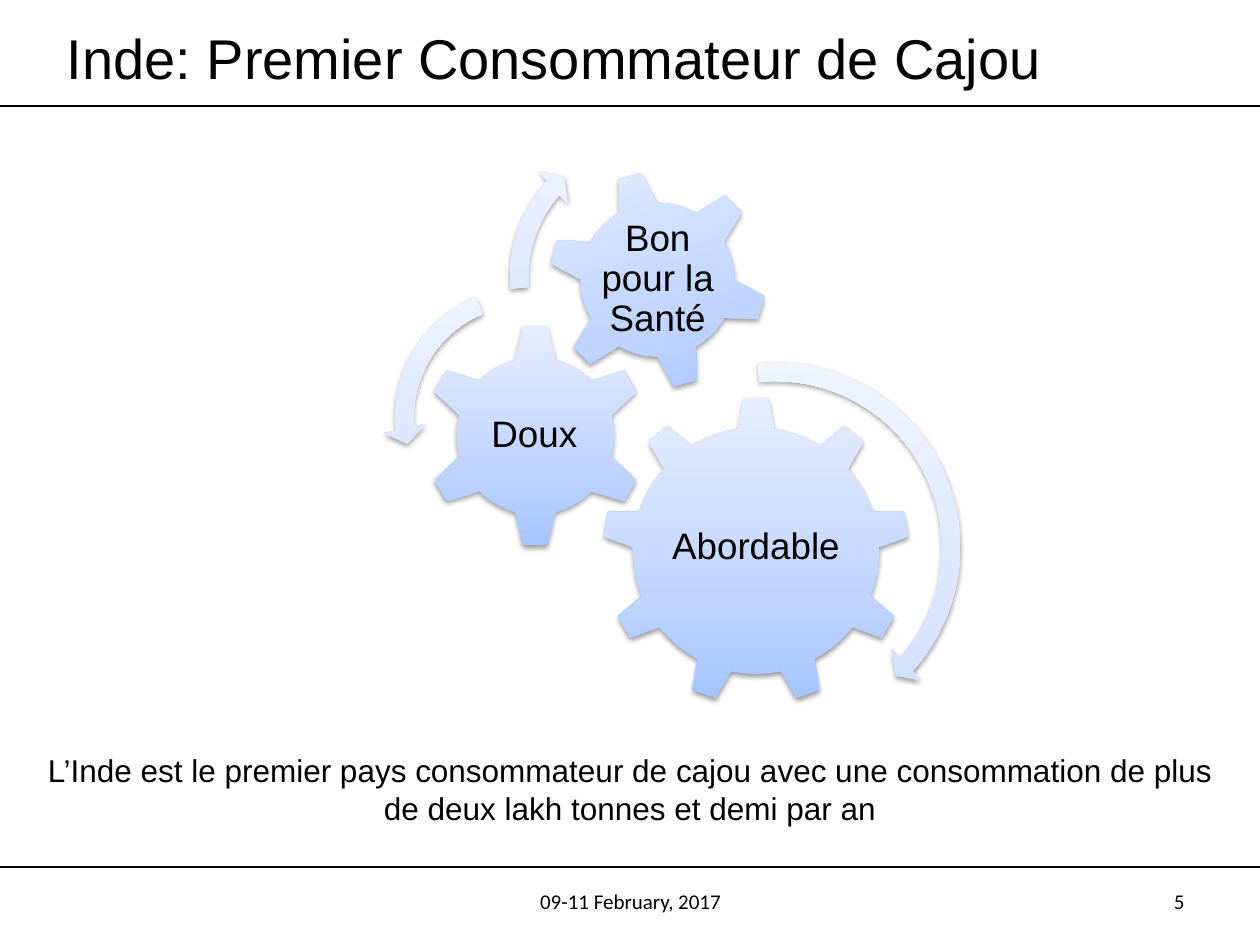
from copy import deepcopy
from dataclasses import dataclass

from lxml import etree
from pptx import Presentation
from pptx.dml.color import RGBColor
from pptx.enum.shapes import MSO_CONNECTOR, MSO_SHAPE
from pptx.enum.text import MSO_ANCHOR, PP_ALIGN
from pptx.oxml.ns import qn
from pptx.util import Inches, Pt

LINE = MSO_CONNECTOR.STRAIGHT
GEAR_SIX, GEAR_NINE = MSO_SHAPE.GEAR_6, MSO_SHAPE.GEAR_9
ARC, LEFT_ARC = MSO_SHAPE.CIRCULAR_ARROW, MSO_SHAPE.LEFT_CIRCULAR_ARROW
MIDDLE, TOP = MSO_ANCHOR.MIDDLE, MSO_ANCHOR.TOP
LEFT, CENTER, RIGHT = PP_ALIGN.LEFT, PP_ALIGN.CENTER, PP_ALIGN.RIGHT
WIDE, HIGH = Inches(10), Inches(7.5)
COLS, ROWS = 100, 75


@dataclass(frozen=True)
class Theme:
    ink: str = "000000"
    gear: tuple = ("A4C4FF", "BFD4FF", "E6EEFF")
    arc: tuple = ("CDDDFE", "DBE6FE", "F0F5FF")
    stops: tuple = (0, 0.35, 1)
    head: str = "Arial"
    foot: str = "Calibri"
    title: int = 32
    label: int = 21
    body: int = 18
    small: int = 12


THEME = Theme()


def place(box):
    x, y, w, h = box
    return [round(v) for v in (x * WIDE / COLS, y * HIGH / ROWS,
                               w * WIDE / COLS, h * HIGH / ROWS)]


def style(frame, size, font, align, anchor=MIDDLE):
    frame.vertical_anchor = anchor
    for para in frame.paragraphs:
        para.alignment = align
        for run in para.runs:
            run.font.size = Pt(size)
            run.font.name = font
            run.font.color.rgb = RGBColor.from_string(THEME.ink)


def write(shapes, box, text, size, font, align, anchor=MIDDLE, wrap=True):
    frame = shapes.add_textbox(*place(box)).text_frame
    frame.word_wrap = wrap
    frame.text = text
    style(frame, size, font, align, anchor)
    return frame


def shade(shape, tones):
    fill = shape.fill
    fill.gradient()
    fill.gradient_angle = 90
    stops = shape._element.spPr.find(qn("a:gradFill")).find(qn("a:gsLst"))
    stops.append(deepcopy(stops[-1]))
    for stop, tone, spot in zip(fill.gradient_stops, tones, THEME.stops):
        stop.color.rgb = RGBColor.from_string(tone)
        stop.position = spot
    shape.line.fill.background()
    shape.shadow.inherit = False
    effects = shape._element.spPr.find(qn("a:effectLst"))
    cast = etree.SubElement(effects, qn("a:outerShdw"), blurRad="40000",
                            dist="20000", dir="5400000", rotWithShape="0")
    color = etree.SubElement(cast, qn("a:srgbClr"), val=THEME.ink)
    etree.SubElement(color, qn("a:alpha"), val="38000")


def rule(shapes, row):
    x, y, w, _ = place((0, row, COLS, 0))
    line = shapes.add_connector(LINE, x, y, x + w, y)
    line.line.color.rgb = RGBColor.from_string(THEME.ink)
    line.line.width = Pt(1)
    etree.SubElement(line._element.spPr, qn("a:effectLst"))


def header(slide, box):
    title = slide.shapes.title
    title.left, title.top, title.width, title.height = place(box)
    title.text_frame.text = "Inde: Premier Consommateur de Cajou"
    style(title.text_frame, THEME.title, THEME.head, LEFT)
    rule(slide.shapes, box[1] + box[3])


def gears(slide, box):
    left, top = box[:2]
    shapes = slide.shapes.add_group_shape().shapes
    wheels = [
        (GEAR_NINE, 17.8, 22.5, 24.4, 0, "Abordable", (4.9, 5.7, 14.6, 12.6)),
        (GEAR_SIX, 3.6, 16.7, 17.8, 0, "Doux", (4.4, 4.5, 8.8, 8.8)),
        (GEAR_SIX, 13.5, 4.5, 17.4, 345, "Bon pour la Santé", (3.8, 3.8, 9.8, 9.8)),
    ]
    for kind, x, y, size, turn, text, (dx, dy, w, h) in wheels:
        x, y = left + x, top + y
        wheel = shapes.add_shape(kind, *place((x, y, size, size)))
        wheel.rotation = turn
        shade(wheel, THEME.gear)
        frame = write(shapes, (x + dx, y + dy, w, h), text,
                      THEME.label, THEME.head, CENTER)
        frame.margin_left = frame.margin_right = Inches(0.03)
        frame.margin_top = frame.margin_bottom = Inches(0.03)
        para = frame.paragraphs[0]
        para.line_spacing = 0.9
        para.space_after = Pt(0.35 * THEME.label)

    arcs = [
        (ARC, 15.9, 18.8, 31.3, (0.047, 2.99, 25.131, 158.679, 0.055)),
        (LEFT_ARC, 0.4, 12.8, 22.7, (0.065, 4.3, 104.891, 148.378, 0.075)),
        (ARC, 9.5, 0.7, 24.5, (0.06, 3.941, 133.138, 105.082, 0.07)),
    ]
    for kind, x, y, size, bends in arcs:
        arc = shapes.add_shape(kind, *place((left + x, top + y, size, size)))
        for i, bend in enumerate(bends):
            arc.adjustments[i] = bend
        shade(arc, THEME.arc)


def note(slide, box):
    write(slide.shapes, box,
          "L’Inde est le premier pays consommateur de cajou avec une "
          "consommation de plus\nde deux lakh tonnes et demi par an",
          THEME.body, THEME.head, CENTER, TOP, False)


def footer(slide, box):
    x, y, w, h = box
    rule(slide.shapes, y)
    parts = [(34.2, 31.7, "09-11 February, 2017", CENTER),
             (71.7, 23.3, "5", RIGHT)]
    for dx, wide, text, align in parts:
        write(slide.shapes, (x + dx, y + 0.7, wide, h), text,
              THEME.small, THEME.foot, align)


def main():
    deck = Presentation()
    deck.slide_width, deck.slide_height = WIDE, HIGH
    slide = deck.slides.add_slide(deck.slide_layouts[5])
    header(slide, (4.3, 0.6, 82, 7.8))
    gears(slide, (30, 9, 48, 50))
    note(slide, (2, 59.1, 96, 7.1))
    footer(slide, (0, 68.8, COLS, 4))
    deck.save("out.pptx")


if __name__ == "__main__":
    main()
